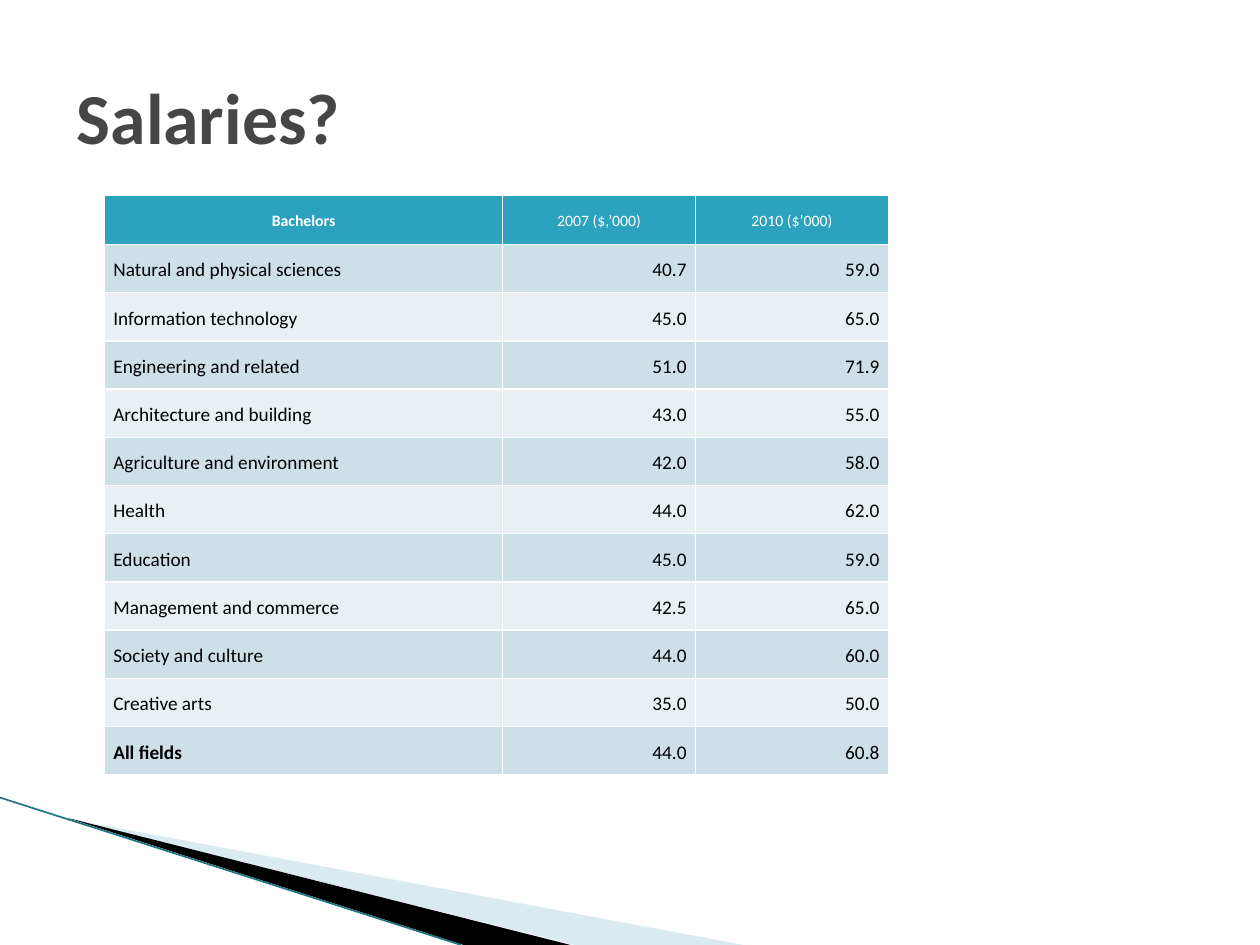
from dataclasses import dataclass

from lxml import etree
from pptx import Presentation
from pptx.dml.color import RGBColor
from pptx.enum.shapes import MSO_CONNECTOR
from pptx.enum.text import MSO_ANCHOR, PP_ALIGN
from pptx.oxml.ns import qn
from pptx.util import Emu, Inches, Pt

STRAIGHT = MSO_CONNECTOR.STRAIGHT
MIDDLE = MSO_ANCHOR.MIDDLE
LEFT, CENTER, RIGHT = PP_ALIGN.LEFT, PP_ALIGN.CENTER, PP_ALIGN.RIGHT
TITLE_ONLY = 5


@dataclass(frozen=True)
class Theme:
    """Colours, type sizes and font of the slide."""
    font: str = "Calibri"
    title: str = "464646"
    header: str = "2DA2BF"
    bands: tuple = ("CDE0E8", "E8F0F4")
    white: str = "FFFFFF"
    black: str = "000000"
    pale_wedge: str = "A0CBDC"
    edge: str = "1F7486"
    title_size: float = 41
    header_size: float = 9
    body_size: float = 11


THEME = Theme()
HEADINGS = ("Bachelors", "2007 ($,’000)", "2010 ($’000)")
SALARIES = (
    ("Natural and physical sciences", 40.7, 59.0),
    ("Information technology", 45.0, 65.0),
    ("Engineering and related", 51.0, 71.9),
    ("Architecture and building", 43.0, 55.0),
    ("Agriculture and environment", 42.0, 58.0),
    ("Health", 44.0, 62.0),
    ("Education", 45.0, 59.0),
    ("Management and commerce", 42.5, 65.0),
    ("Society and culture", 44.0, 60.0),
    ("Creative arts", 35.0, 50.0),
    ("All fields", 44.0, 60.8),
)
COLUMN_WIDTHS = (3.16, 1.53, 1.53)
HEADER_HEIGHT, TABLE_HEIGHT = 0.39, 4.6
PALE_WEDGE = ((0.55, 6.5), (5.9, 7.5), (4.56, 7.5))
DARK_WEDGE = ((0.53, 6.49), (4.53, 7.5), (3.68, 7.5))
EDGE = ((0, 6.33), (3.66, 7.5))


def apply_format(target, values):
    """Set each attribute named in values on target."""
    for attribute, value in values.items():
        setattr(target, attribute, value)


def style_font(font, size, color, bold):
    """Give a font the theme's typeface with a size, colour and weight."""
    apply_format(font, {"name": THEME.font, "size": Pt(size), "bold": bold})
    font.color.rgb = RGBColor.from_string(color)


def fill_solid(fill, color):
    """Fill with one plain colour."""
    fill.solid()
    fill.fore_color.rgb = RGBColor.from_string(color)


def add_wedge(slide, corners, color, opacity=100):
    """Draw a borderless polygon through the corners."""
    points = [(Inches(x), Inches(y)) for x, y in corners]
    builder = slide.shapes.build_freeform(*points[0])
    builder.add_line_segments(points[1:], close=True)
    wedge = builder.convert_to_shape()
    wedge.shadow.inherit = False
    fill_solid(wedge.fill, color)
    wedge.line.fill.background()
    if opacity < 100:
        tint = wedge.fill._xPr.find(f".//{qn('a:srgbClr')}")
        etree.SubElement(tint, qn("a:alpha"), val=str(opacity * 1000))


def add_edge(slide, start, end):
    """Draw the thin line along the wedges."""
    edge = slide.shapes.add_connector(STRAIGHT, *map(Inches, start + end))
    edge.line.width = Pt(0.95)
    edge.line.color.rgb = RGBColor.from_string(THEME.edge)
    etree.SubElement(edge._element.spPr, qn("a:effectLst"))


def add_title(slide, text):
    """Place and format the title placeholder."""
    title = slide.shapes.title
    apply_format(title, {"left": Inches(0.51), "top": Inches(0.29),
                         "width": Inches(9), "height": Inches(1.25)})
    title.text_frame.text = text
    title.text_frame.vertical_anchor = MIDDLE
    heading = title.text_frame.paragraphs[0]
    heading.alignment = LEFT
    style_font(heading.font, THEME.title_size, THEME.title, True)


def add_borders(cell):
    """Rule all four sides of a cell in white."""
    properties = cell._tc.get_or_add_tcPr()
    for position, side in enumerate(("lnL", "lnR", "lnT", "lnB")):
        border = etree.Element(qn(f"a:{side}"), w=str(Pt(1)))
        paint = etree.SubElement(border, qn("a:solidFill"))
        etree.SubElement(paint, qn("a:srgbClr"), val=THEME.white)
        properties.insert(position, border)


def write_cell(cell, text, fill, alignment, size, color, bold):
    """Fill, rule and letter one table cell."""
    fill_solid(cell.fill, fill)
    add_borders(cell)
    apply_format(cell, {"text": text, "vertical_anchor": MIDDLE,
                        "margin_left": Inches(0.07), "margin_right": Inches(0.07),
                        "margin_top": 0, "margin_bottom": 0})
    paragraph = cell.text_frame.paragraphs[0]
    apply_format(paragraph, {"alignment": alignment, "line_spacing": 1.15})
    style_font(paragraph.font, size, color, bold)


def add_salary_table(slide):
    """Build the table of salaries by field of study."""
    table = slide.shapes.add_table(
        len(SALARIES) + 1, len(HEADINGS), Inches(0.83), Inches(1.55),
        Inches(sum(COLUMN_WIDTHS)), Inches(TABLE_HEIGHT)).table
    for column, width in zip(table.columns, COLUMN_WIDTHS):
        column.width = Inches(width)
    body_height = Inches(TABLE_HEIGHT - HEADER_HEIGHT) / len(SALARIES)
    for index, row in enumerate(table.rows):
        row.height = Emu(int(body_height)) if index else Inches(HEADER_HEIGHT)

    for column, heading in enumerate(HEADINGS):
        write_cell(table.cell(0, column), heading, THEME.header, CENTER,
                   THEME.header_size, THEME.white, column == 0)
    for row, (field, *amounts) in enumerate(SALARIES, start=1):
        band = THEME.bands[(row - 1) % 2]
        write_cell(table.cell(row, 0), field, band, LEFT,
                   THEME.body_size, THEME.black, row == len(SALARIES))
        for column, amount in enumerate(amounts, start=1):
            write_cell(table.cell(row, column), f"{amount:.1f}", band, RIGHT,
                       THEME.body_size, THEME.black, False)


def main():
    """Build the salaries slide and save it."""
    deck = Presentation()
    apply_format(deck, {"slide_width": Inches(10), "slide_height": Inches(7.5)})
    slide = deck.slides.add_slide(deck.slide_layouts[TITLE_ONLY])
    add_wedge(slide, PALE_WEDGE, THEME.pale_wedge, opacity=40)
    add_wedge(slide, DARK_WEDGE, THEME.black)
    add_edge(slide, *EDGE)
    add_title(slide, "Salaries?")
    add_salary_table(slide)
    deck.save("out.pptx")


if __name__ == "__main__":
    main()
